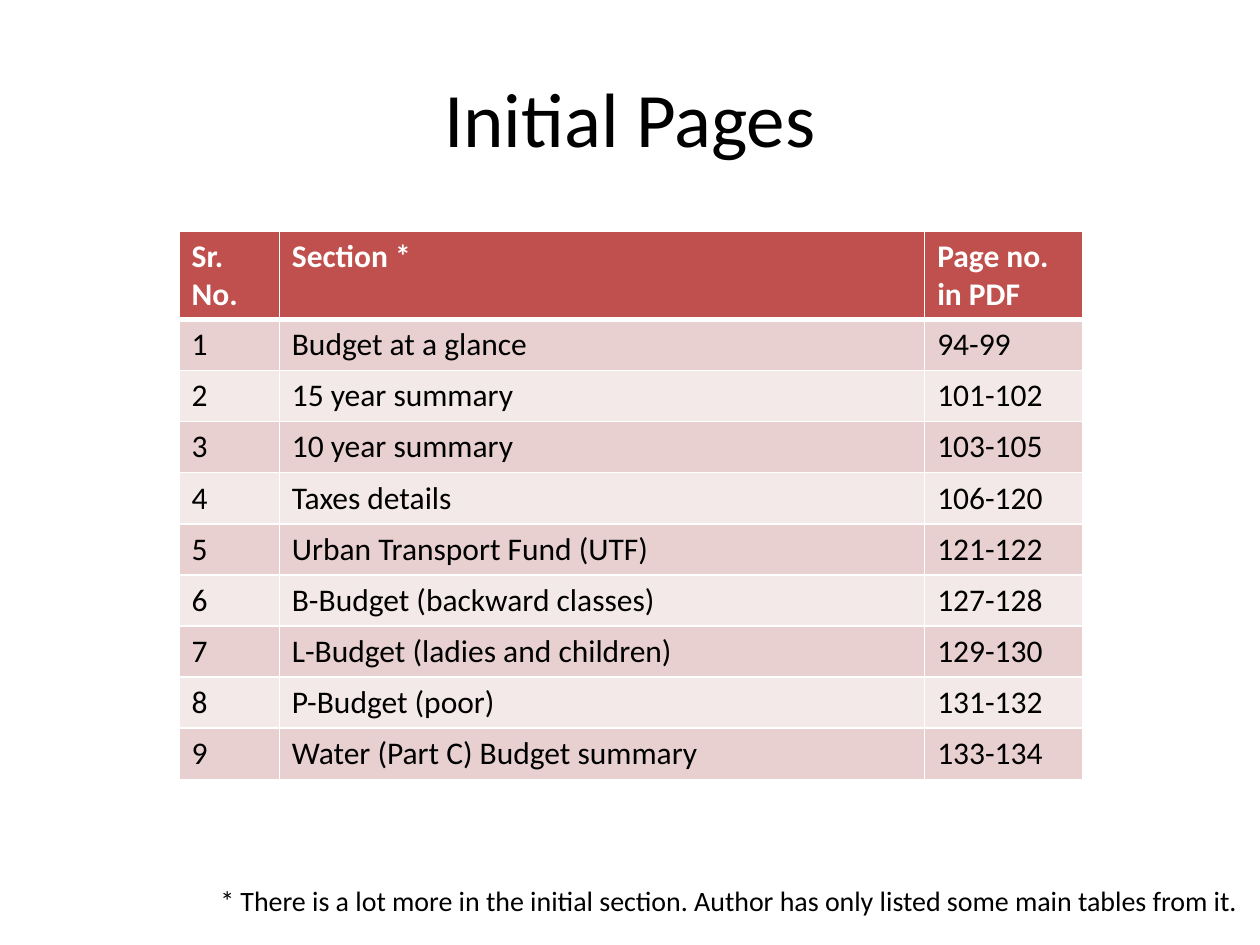
from dataclasses import dataclass
from typing import Any

from lxml.etree import SubElement
from pptx import Presentation
from pptx.dml.color import RGBColor
from pptx.enum.text import MSO_ANCHOR, PP_ALIGN
from pptx.oxml.ns import qn
from pptx.util import Cm, Pt


@dataclass(frozen=True)
class Theme:
    font: str = "Calibri"
    title_size: int = 44
    table_size: int = 18
    note_size: int = 16
    ink: str = "000000"
    paper: str = "FFFFFF"
    header: str = "C0504D"
    bands: tuple[str, str] = ("E8D0D0", "F4E9E9")
    rule: float = 1
    header_rule: float = 3


@dataclass(frozen=True)
class Label:
    text: str
    left: float
    top: float
    width: float
    height: float
    size: int
    align: PP_ALIGN
    anchor: MSO_ANCHOR


THEME = Theme()
LABELS = (
    Label("Initial Pages", 1.27, 0.76, 22.86, 3.18,
          THEME.title_size, PP_ALIGN.CENTER, MSO_ANCHOR.MIDDLE),
    Label("* There is a lot more in the initial section. "
          "Author has only listed some main tables from it.",
          2.34, 17.68, 22.86, 0.94, THEME.note_size, PP_ALIGN.RIGHT, MSO_ANCHOR.TOP),
)
HEADINGS = ("Sr. No.", "Section *", "Page no. in PDF")
SECTIONS = (
    ("Budget at a glance", "94-99"),
    ("15 year summary", "101-102"),
    ("10 year summary", "103-105"),
    ("Taxes details", "106-120"),
    ("Urban Transport Fund (UTF)", "121-122"),
    ("B-Budget (backward classes)", "127-128"),
    ("L-Budget (ladies and children)", "129-130"),
    ("P-Budget (poor)", "131-132"),
    ("Water (Part C) Budget summary", "133-134"),
)
TABLE_LEFT, TABLE_TOP = 3.61, 4.66
COLUMN_WIDTHS = (2.02, 13.01, 3.18)
HEADER_HEIGHT, ROW_HEIGHT = 1.78, 1.03


def write_text(frame: Any, text: str, size: int, color: str, bold: bool = False) -> Any:
    paragraph = frame.paragraphs[0]
    span = paragraph.add_run()
    span.text = text
    formats = {"name": THEME.font, "size": Pt(size), "bold": bold}
    for name, value in formats.items():
        setattr(span.font, name, value)
    span.font.color.rgb = RGBColor.from_string(color)
    return paragraph


def add_label(page: Any, label: Label) -> None:
    box = page.shapes.add_textbox(
        Cm(label.left), Cm(label.top), Cm(label.width), Cm(label.height))
    frame = box.text_frame
    formats = {"word_wrap": True, "vertical_anchor": label.anchor}
    for name, value in formats.items():
        setattr(frame, name, value)
    write_text(frame, label.text, label.size, THEME.ink).alignment = label.align


def add_borders(cell: Any, top: float, bottom: float) -> None:
    properties = cell._tc.get_or_add_tcPr()
    widths = {"L": THEME.rule, "R": THEME.rule, "T": top, "B": bottom}
    for side, width in widths.items():
        line = SubElement(properties, qn(f"a:ln{side}"), w=str(Pt(width)))
        fill = SubElement(line, qn("a:solidFill"))
        SubElement(fill, qn("a:srgbClr"), val=THEME.paper)


def add_section_table(page: Any) -> None:
    rows = [HEADINGS]
    rows += [(str(number), *section) for number, section in enumerate(SECTIONS, 1)]
    heights = [HEADER_HEIGHT] + [ROW_HEIGHT] * len(SECTIONS)
    table = page.shapes.add_table(
        len(rows), len(HEADINGS), Cm(TABLE_LEFT), Cm(TABLE_TOP),
        Cm(sum(COLUMN_WIDTHS)), Cm(sum(heights))).table
    for column, width in zip(table.columns, COLUMN_WIDTHS):
        column.width = Cm(width)
    for index, (values, height) in enumerate(zip(rows, heights)):
        table.rows[index].height = Cm(height)
        heading = index == 0
        color = THEME.paper if heading else THEME.ink
        background = THEME.header if heading else THEME.bands[(index - 1) % 2]
        top = THEME.header_rule if index == 1 else THEME.rule
        bottom = THEME.header_rule if heading else THEME.rule
        for cell, value in zip(table.rows[index].cells, values):
            add_borders(cell, top, bottom)
            cell.fill.solid()
            cell.fill.fore_color.rgb = RGBColor.from_string(background)
            write_text(cell.text_frame, value, THEME.table_size, color, heading)


def main() -> None:
    deck = Presentation()
    deck.slide_width, deck.slide_height = Cm(25.4), Cm(19.05)
    page = deck.slides.add_slide(deck.slide_layouts[6])
    title, note = LABELS
    add_label(page, title)
    add_section_table(page)
    add_label(page, note)
    deck.save("out.pptx")


if __name__ == "__main__":
    main()
